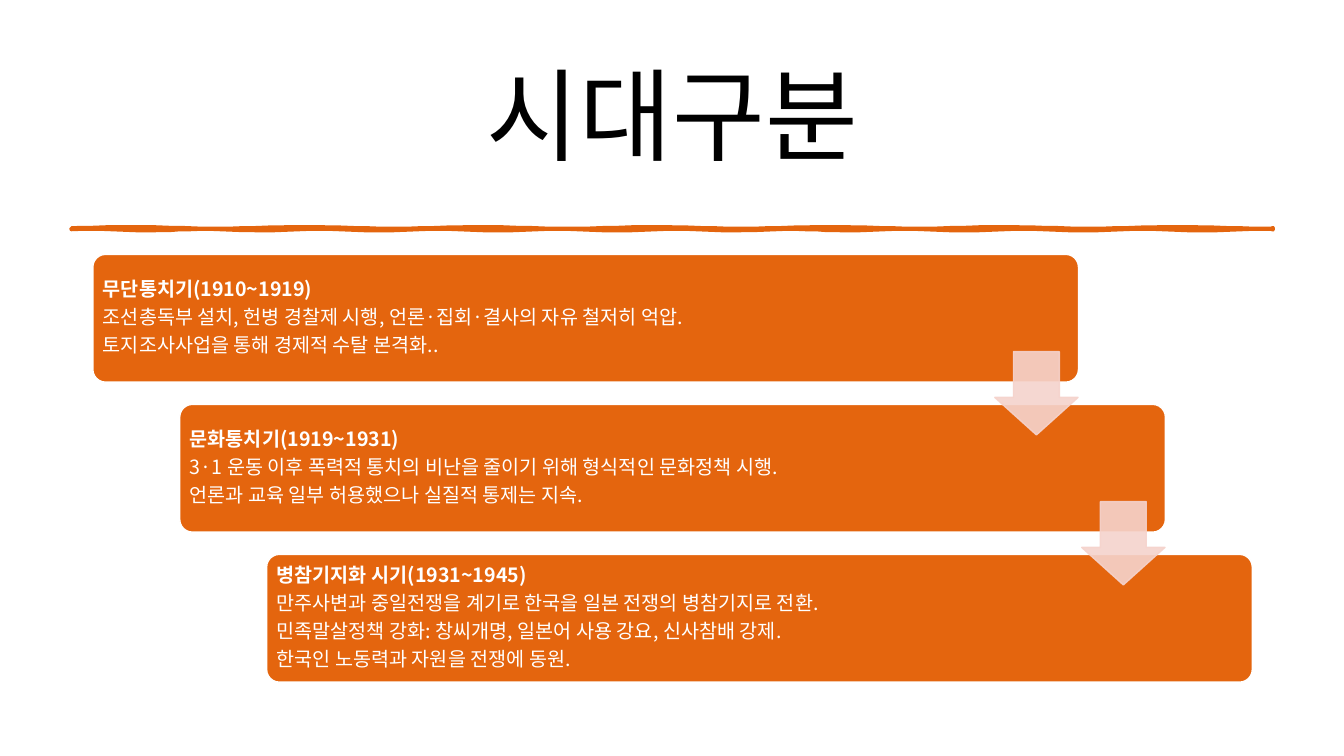
import math

from lxml import etree
from pptx import Presentation
from pptx import util as u
from pptx.dml import color
from pptx.enum import shapes, text
from pptx.oxml import ns

COLOURS = {"orange": "E4650E", "pink": "F5D3CC", "white": "FFFFFF", "black": "000000"}
FONT = "Noto Sans CJK KR"
PERIODS = [
    ["무단통치기(1910~1919)",
     "조선총독부 설치, 헌병 경찰제 시행, 언론·집회·결사의 자유 철저히 억압.",
     "토지조사사업을 통해 경제적 수탈 본격화.."],
    ["문화통치기(1919~1931)",
     "3·1 운동 이후 폭력적 통치의 비난을 줄이기 위해 형식적인 문화정책 시행.",
     "언론과 교육 일부 허용했으나 실질적 통제는 지속."],
    ["병참기지화 시기(1931~1945)",
     "만주사변과 중일전쟁을 계기로 한국을 일본 전쟁의 병참기지로 전환.",
     "민족말살정책 강화: 창씨개명, 일본어 사용 강요, 신사참배 강제.",
     "한국인 노동력과 자원을 전쟁에 동원."],
]
BOX_LEFT, BOX_TOP, BOX_WIDTH, BOX_HEIGHT = 2.34, 6.41, 24.84, 3.22
STEP_X, STEP_Y = 2.19, 3.78
ARROW_SIZE, ARROW_LEFT, ARROW_TOP = 2.1, 25.07, 8.86


def rgb(name):
    """Return the named colour."""
    return color.RGBColor.from_string(COLOURS[name])


def set_format(target, values):
    """Set each attribute of the target from a dict of format values."""
    for name, value in values.items():
        setattr(target, name, value)


def add_text(paragraph, words, size, colour, bold=False):
    """Add one formatted run to a paragraph."""
    run = paragraph.add_run()
    run.text = words
    set_format(run.font, {"name": FONT, "size": u.Pt(size), "bold": bold})
    run.font.color.rgb = rgb(colour)
    east_asian = etree.SubElement(run.font._element, ns.qn("a:ea"))
    east_asian.set("typeface", FONT)


def paint(shape, fill, line, width):
    """Give a shape a solid fill and line without shadow."""
    shape.shadow.inherit = False
    shape.fill.solid()
    shape.fill.fore_color.rgb = rgb(fill)
    shape.line.color.rgb = rgb(line)
    shape.line.width = u.Pt(width)


def set_opacity(shape, percent):
    """Set the opacity of the fill and line colours of a shape."""
    for colour in shape._element.spPr.iter(ns.qn("a:srgbClr")):
        etree.SubElement(colour, ns.qn("a:alpha")).set("val", str(percent * 1000))


def set_space_after(paragraph, percent):
    """Set the space after a paragraph as a share of its line."""
    paragraph.space_after = u.Pt(0)
    spacing = paragraph._p.pPr.find(ns.qn("a:spcAft"))
    spacing.clear()
    etree.SubElement(spacing, ns.qn("a:spcPct")).set("val", str(percent * 1000))


def add_title(slide, words):
    """Place and fill the title placeholder."""
    title = slide.shapes.title
    set_format(title, {"left": u.Cm(2.34), "top": u.Cm(1.01),
                       "width": u.Cm(29.21), "height": u.Cm(3.68)})
    set_format(title.text_frame, {"vertical_anchor": text.MSO_ANCHOR.MIDDLE,
                                  "auto_size": text.MSO_AUTO_SIZE.NONE})
    paragraph = title.text_frame.paragraphs[0]
    paragraph.alignment = text.PP_ALIGN.CENTER
    add_text(paragraph, words, 72, "black")


def add_brush_line(slide):
    """Draw the hand-drawn rule under the title."""
    left, right, top, bottom, step = 180, 3208, 574, 579, 25
    steps = range(left, right, step)
    upper = [(x, top + 2 * math.sin(x / 70)) for x in steps] + [(right, top)]
    lower = [(x, bottom + 2 * math.sin(x / 47)) for x in steps] + [(right, bottom)]
    outline = upper + lower[::-1]
    builder = slide.shapes.build_freeform(*outline[0], scale=u.Cm(0.01))
    builder.add_line_segments(outline[1:], close=True)
    paint(builder.convert_to_shape(), "orange", "orange", 2.75)


def add_period(slide, index, lines):
    """Add one step of the staircase with its heading and details."""
    shape = slide.shapes.add_shape(
        shapes.MSO_SHAPE.ROUNDED_RECTANGLE,
        u.Cm(BOX_LEFT + index * STEP_X), u.Cm(BOX_TOP + index * STEP_Y),
        u.Cm(BOX_WIDTH), u.Cm(BOX_HEIGHT))
    shape.adjustments[0] = 0.1
    paint(shape, "orange", "white", 1)
    frame = shape.text_frame
    set_format(frame, {"word_wrap": True, "vertical_anchor": text.MSO_ANCHOR.MIDDLE,
                       "margin_left": u.Cm(0.16), "margin_right": u.Cm(3.4),
                       "margin_top": u.Cm(0.15), "margin_bottom": u.Cm(0.15)})
    for number, words in enumerate(lines):
        paragraph = frame.add_paragraph() if number else frame.paragraphs[0]
        set_format(paragraph, {"alignment": text.PP_ALIGN.LEFT, "line_spacing": 0.9})
        set_space_after(paragraph, 35)
        add_text(paragraph, words, 14, "white", bold=number == 0)


def add_arrow(slide, index):
    """Add the arrow that leads from one step to the next."""
    shape = slide.shapes.add_shape(
        shapes.MSO_SHAPE.DOWN_ARROW,
        u.Cm(ARROW_LEFT + index * STEP_X), u.Cm(ARROW_TOP + index * STEP_Y),
        u.Cm(ARROW_SIZE), u.Cm(ARROW_SIZE))
    shape.adjustments[0] = 0.55
    shape.adjustments[1] = 0.45
    paint(shape, "pink", "pink", 1)
    set_opacity(shape, 90)


def main():
    """Build the slide and save it."""
    presentation = Presentation()
    set_format(presentation, {"slide_width": u.Cm(33.87), "slide_height": u.Cm(19.05)})
    slide = presentation.slides.add_slide(presentation.slide_layouts[5])
    add_brush_line(slide)
    add_title(slide, "시대구분")
    for index, lines in enumerate(PERIODS):
        add_period(slide, index, lines)
    for index in range(len(PERIODS) - 1):
        add_arrow(slide, index)
    presentation.save("out.pptx")


if __name__ == "__main__":
    main()
